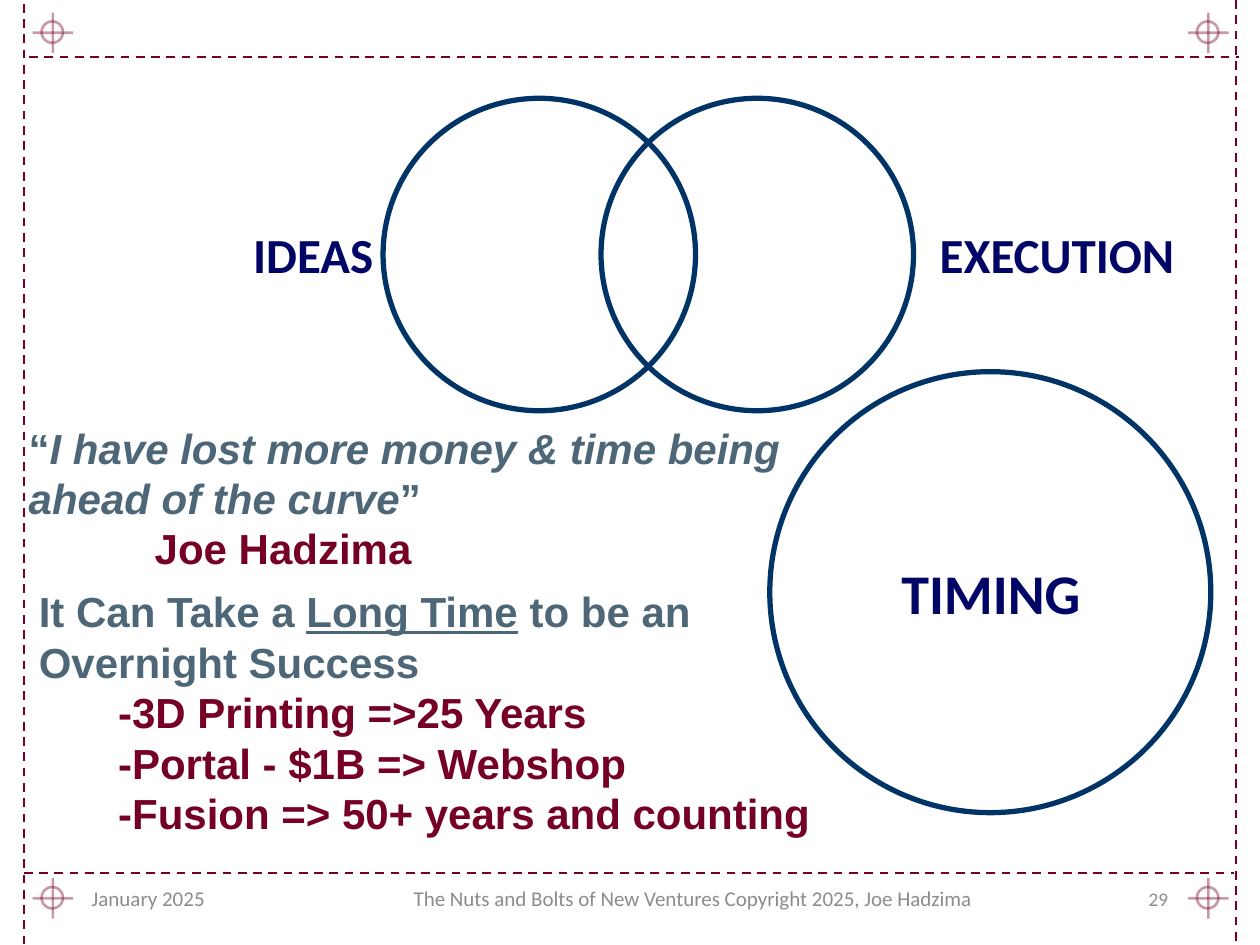
from lxml.etree import SubElement
from pptx import Presentation
from pptx.dml.color import RGBColor
from pptx.enum.dml import MSO_LINE
from pptx.enum.shapes import MSO_CONNECTOR, MSO_SHAPE
from pptx.enum.text import MSO_ANCHOR, PP_ALIGN
from pptx.oxml.ns import qn
from pptx.util import Inches, Pt

MAROON = "760025"
NAVY = "000566"
CIRCLE_BLUE = "003366"
SLATE = "4D6778"
GRAY = "8C8C8C"


def color(hex_value):
    return RGBColor.from_string(hex_value)


def style_line(shape, hex_value, width, opacity=None):
    shape.line.color.rgb = color(hex_value)
    shape.line.width = Pt(width)
    if opacity is not None:
        fill = shape.line._ln.find(qn("a:solidFill"))
        SubElement(fill[0], qn("a:alpha"), val=str(opacity * 1000))


def add_line(shapes, start, end, width, opacity=None):
    points = [Inches(value) for value in (*start, *end)]
    line = shapes.add_connector(MSO_CONNECTOR.STRAIGHT, *points)
    style_line(line, MAROON, width, opacity)
    SubElement(line._element.spPr, qn("a:effectLst"))
    return line


def add_circle(shapes, left, top, diameter, hex_value, width, opacity=None):
    circle = shapes.add_shape(
        MSO_SHAPE.OVAL, Inches(left), Inches(top), Inches(diameter), Inches(diameter)
    )
    circle.shadow.inherit = False
    circle.fill.background()
    style_line(circle, hex_value, width, opacity)


def add_guide(slide, start, end):
    guide = add_line(slide.shapes, start, end, 1.25)
    guide.line.dash_style = MSO_LINE.DASH


def add_registration_mark(slide, center_x, center_y):
    shapes = slide.shapes.add_group_shape().shapes
    add_circle(shapes, center_x - 0.09, center_y - 0.09, 0.17, MAROON, 1.5, 40)
    add_line(shapes, (center_x, center_y - 0.16), (center_x, center_y + 0.16), 1.5, 40)
    add_line(shapes, (center_x + 0.16, center_y), (center_x - 0.16, center_y), 1.5, 40)


def add_text_box(slide, left, top, width, height):
    box = slide.shapes.add_textbox(
        Inches(left), Inches(top), Inches(width), Inches(height)
    )
    box.text_frame.word_wrap = True
    return box.text_frame


def format_run(run, font_name, size, hex_value, bold):
    run.font.name = font_name
    run.font.size = Pt(size)
    run.font.color.rgb = color(hex_value)
    run.font.bold = bold


def add_label(slide, bounds, text, size, hex_value, alignment, bold=True):
    frame = add_text_box(slide, *bounds)
    frame.text = text
    paragraph = frame.paragraphs[0]
    paragraph.alignment = alignment
    format_run(paragraph.runs[0], "Calibri", size, hex_value, bold)
    return frame


def add_footer(slide, bounds, text, size, alignment):
    frame = add_label(slide, bounds, text, size, GRAY, alignment, bold=False)
    frame.vertical_anchor = MSO_ANCHOR.MIDDLE


def add_statement(slide, bounds, statement, emphasis, details, tab):
    frame = add_text_box(slide, *bounds)
    paragraph = frame.paragraphs[0]
    for index, text in enumerate(statement):
        run = paragraph.add_run()
        run.text = text
        format_run(run, "Arial", 24, SLATE, True)
        if index == 1:
            setattr(run.font, emphasis, True)
    for text in details:
        paragraph = frame.add_paragraph()
        tabs = SubElement(paragraph._p.get_or_add_pPr(), qn("a:tabLst"))
        SubElement(tabs, qn("a:tab"), pos=str(Inches(tab)), algn="l")
        run = paragraph.add_run()
        run.text = "\t" + text
        format_run(run, "Arial", 24, MAROON, True)


def main():
    presentation = Presentation()
    presentation.slide_width = Inches(10)
    presentation.slide_height = Inches(7.5)
    slide = presentation.slides.add_slide(presentation.slide_layouts[6])

    add_guide(slide, (0.19, 0.03), (0.19, 7.5))
    add_guide(slide, (0.23, 0.45), (9.83, 0.45))
    add_guide(slide, (9.81, 0), (9.81, 7.5))
    add_guide(slide, (0.19, 6.93), (9.79, 6.93))
    for center_y in (0.26, 7.13):
        for center_x in (0.42, 9.59):
            add_registration_mark(slide, center_x, center_y)

    add_footer(slide, (0.63, 6.93, 2.33, 0.4), "January 2025", 12, PP_ALIGN.LEFT)
    add_footer(
        slide,
        (2, 6.93, 7, 0.4),
        "The Nuts and Bolts of New Ventures Copyright 2025, Joe Hadzima",
        12,
        PP_ALIGN.CENTER,
    )
    add_footer(slide, (7.04, 6.93, 2.33, 0.4), "29", 11, PP_ALIGN.RIGHT)

    for left, top, diameter in ((3.04, 0.78, 2.48), (6.11, 2.95, 3.5), (4.77, 0.78, 2.48)):
        add_circle(slide.shapes, left, top, diameter, CIRCLE_BLUE, 3)
    add_label(slide, (1.52, 1.73, 1.54, 0.57), "IDEAS", 28, NAVY, PP_ALIGN.RIGHT)
    add_label(slide, (6.78, 4.38, 2.17, 0.64), "TIMING", 32, NAVY, PP_ALIGN.CENTER)
    add_label(slide, (7.36, 1.73, 2.75, 0.57), "EXECUTION", 28, NAVY, PP_ALIGN.LEFT)

    add_statement(
        slide,
        (0.13, 3.3, 6.2, 1.72),
        ("“", "I have lost more money & time being ahead of the curve", "”"),
        "italic",
        ("Joe Hadzima",),
        tab=1,
    )
    add_statement(
        slide,
        (0.21, 4.6, 6.56, 2.52),
        ("It Can Take a ", "Long Time", " to be an Overnight Success"),
        "underline",
        (
            "-3D Printing =>25 Years",
            "-Portal - $1B => Webshop",
            "-Fusion => 50+ years and counting",
        ),
        tab=0.63,
    )
    presentation.save("out.pptx")


if __name__ == "__main__":
    main()
